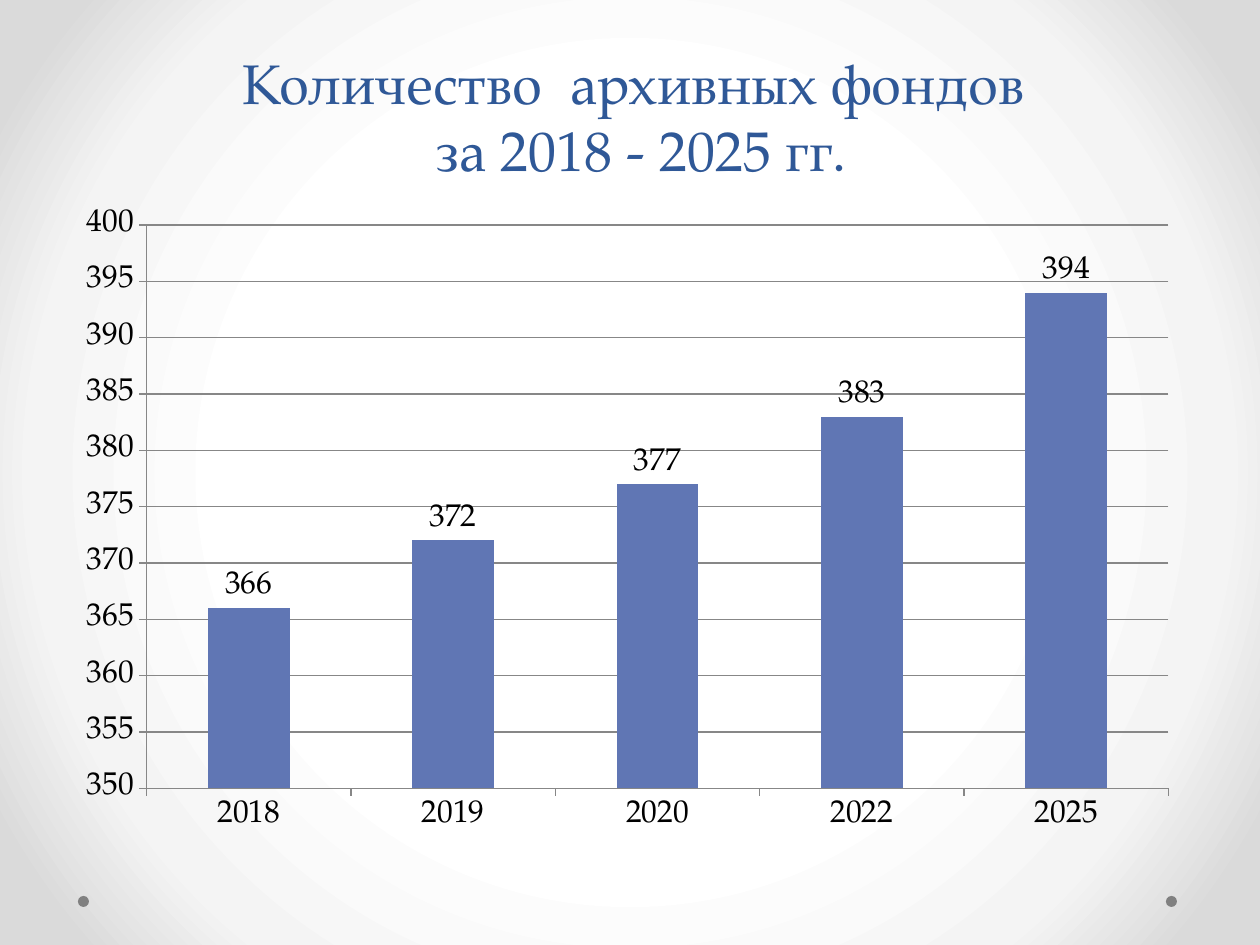
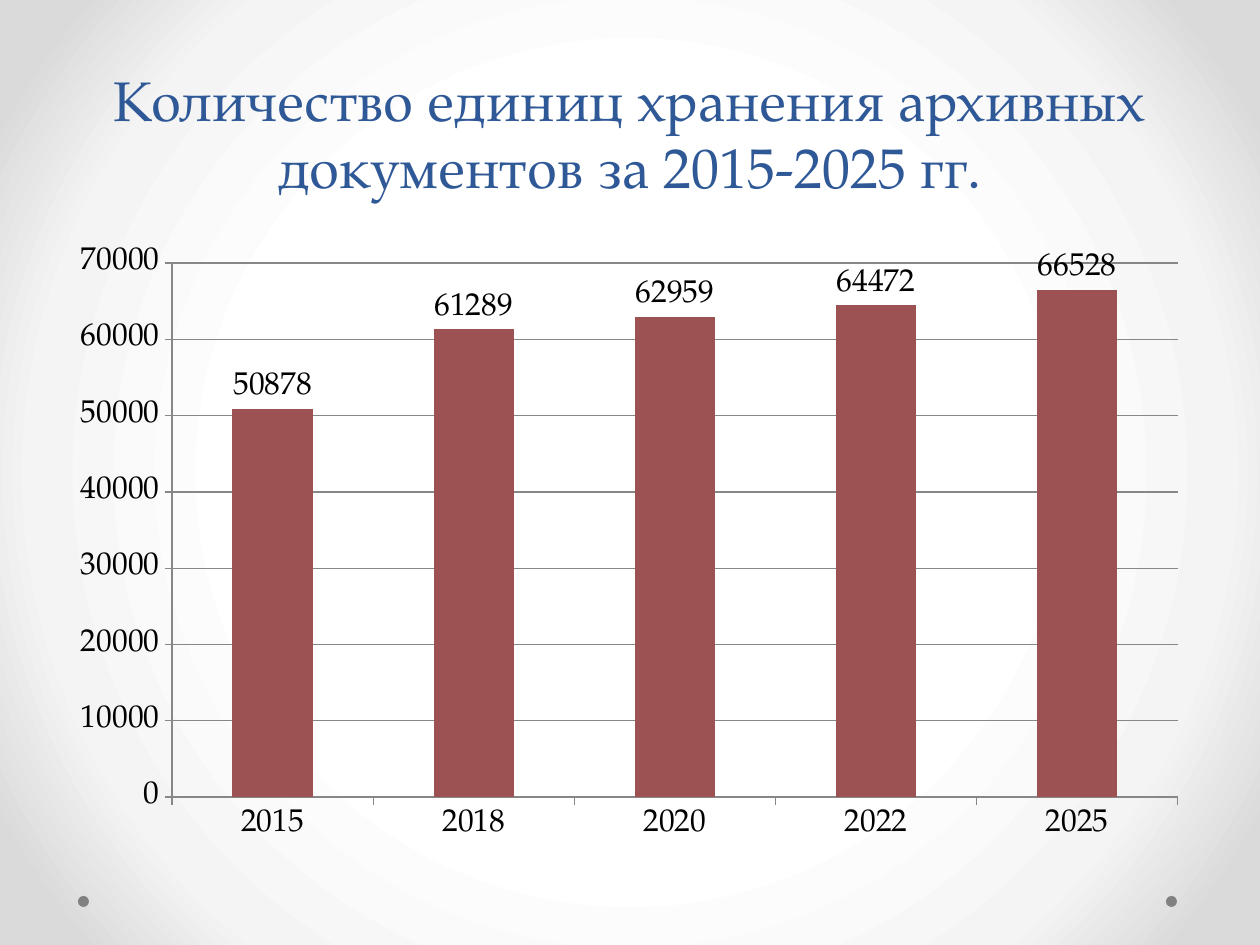
from lxml import etree
from pptx import Presentation
from pptx.chart.data import CategoryChartData
from pptx.dml.color import RGBColor
from pptx.enum.chart import XL_CHART_TYPE, XL_LABEL_POSITION, XL_TICK_MARK
from pptx.enum.shapes import MSO_SHAPE
from pptx.enum.text import MSO_ANCHOR, MSO_AUTO_SIZE, PP_ALIGN
from pptx.oxml import parse_xml
from pptx.oxml.ns import nsdecls, qn
from pptx.util import Pt

SCALE = 914400 / 126
FONT = "TeX Gyre Pagella"
COLORS = {"title": "2F5897", "text": "000000", "dot": "808080",
          "line": "878787", "blue": "6076B4", "red": "9C5252"}
GLOW = [(50, "FFFFFF"), (76, "F4F4F4"), (92, "DADADA")]
DOTS = [(1166, 896, 11, 11), (78, 896, 11, 11)]
COLUMN = XL_CHART_TYPE.COLUMN_CLUSTERED
ABOVE = XL_LABEL_POSITION.OUTSIDE_END
OUT, NONE = XL_TICK_MARK.OUTSIDE, XL_TICK_MARK.NONE
OVAL = MSO_SHAPE.OVAL
BOTTOM, CENTER = MSO_ANCHOR.BOTTOM, PP_ALIGN.CENTER
NO_FIT = MSO_AUTO_SIZE.NONE

PAGES = [
    {"title": ["Количество  архивных фондов ", "за 2018 - 2025 гг."],
     "head": (84, 71, 1113, 118), "box": (64, 195, 1133, 669),
     "plot": (147, 225, 1022, 563), "range": (350, 400, 5), "color": "blue",
     "data": {"2018": 366, "2019": 372, "2020": 377, "2022": 383, "2025": 394}},
    {"title": ["Количество единиц хранения архивных документов за 2015-2025 гг."],
     "head": (0, 37, 1260, 169), "box": (59, 234, 1143, 619),
     "plot": (172, 263, 1006, 534), "range": (0, 70000, 10000), "color": "red",
     "data": {"2015": 50878, "2018": 61289, "2020": 62959, "2022": 64472,
              "2025": 66528}},
]


def px(num):
    """Turn px into EMU."""
    return round(num * SCALE)


def rgb(name):
    """Look up a named colour."""
    return RGBColor.from_string(COLORS[name])


def style(font, size, color):
    """Set the shared typeface with a size and colour."""
    font.name, font.size, font.bold = FONT, Pt(size), False
    font.color.rgb = rgb(color)


def add_glow(master):
    """Fill the master background with a round gradient."""
    fill = master.background.fill
    fill.solid()
    stops = "".join(f'<a:gs pos="{pos * 1000}"><a:srgbClr val="{tone}"/></a:gs>'
                    for pos, tone in GLOW)
    grad = parse_xml(
        f'<a:gradFill {nsdecls("a")} rotWithShape="1"><a:gsLst>{stops}</a:gsLst>'
        '<a:path path="circle"><a:fillToRect l="50000" t="50000" r="50000" '
        'b="50000"/></a:path></a:gradFill>')
    solid = next(master.element.iter(qn("a:solidFill")))
    solid.getparent().replace(solid, grad)


def add_dots(slide, master):
    """Draw the two footer dots and move them to the master."""
    for box in DOTS:
        dot = slide.shapes.add_shape(OVAL, *map(px, box))
        dot.shadow.inherit = False
        dot.fill.solid()
        dot.fill.fore_color.rgb = rgb("dot")
        dot.line.fill.background()
        master.shapes.element.append(dot.element)


def add_title(slide, box, lines):
    """Place the title placeholder and write its lines."""
    head = slide.shapes.title
    head.left, head.top, head.width, head.height = map(px, box)
    frame = head.text_frame
    frame.word_wrap, frame.auto_size = True, NO_FIT
    frame.vertical_anchor = BOTTOM
    para = frame.paragraphs[0]
    para.alignment = CENTER
    for num, line in enumerate(lines):
        if num:
            para.add_line_break()
        run = para.add_run()
        run.text = line
        style(run.font, 32, "title")


def set_plot(chart, box, plot):
    """Fix the inner plot area as fractions of the chart box."""
    parts = ((plot[0] - box[0]) / box[2], (plot[1] - box[1]) / box[3],
             plot[2] / box[2], plot[3] / box[3])
    area = next(chart.element.iter(qn("c:plotArea")))
    for old in area.findall(qn("c:layout")):
        area.remove(old)
    layout = etree.Element(qn("c:layout"))
    manual = etree.SubElement(layout, qn("c:manualLayout"))
    rules = [("layoutTarget", "inner"), ("xMode", "edge"), ("yMode", "edge")]
    rules += [(key, f"{part:.3f}") for key, part in zip("xywh", parts)]
    for key, val in rules:
        etree.SubElement(manual, qn(f"c:{key}")).set("val", val)
    area.insert(0, layout)


def set_line(line):
    """Give an axis or grid its thin grey line."""
    line.color.rgb = rgb("line")
    line.width = Pt(0.75)


def add_bars(slide, page):
    """Add the labelled column chart in its box."""
    data = CategoryChartData()
    data.categories = list(page["data"])
    data.add_series("Series 1", list(page["data"].values()))
    box = page["box"]
    chart = slide.shapes.add_chart(COLUMN, *map(px, box), data).chart
    chart.has_legend = chart.has_title = False
    style(chart.font, 18, "text")
    set_plot(chart, box, page["plot"])
    scale = chart.value_axis
    scale.minimum_scale, scale.maximum_scale, scale.major_unit = page["range"]
    scale.has_major_gridlines = True
    set_line(scale.major_gridlines.format.line)
    for axis in (chart.category_axis, scale):
        axis.major_tick_mark, axis.minor_tick_mark = OUT, NONE
        set_line(axis.format.line)
    plot = chart.plots[0]
    plot.gap_width, plot.vary_by_categories = 150, False
    bars = plot.series[0]
    bars.format.fill.solid()
    bars.format.fill.fore_color.rgb = rgb(page["color"])
    labels = bars.data_labels
    labels.show_value, labels.position = True, ABOVE
    style(labels.font, 18, "text")


def main():
    """Build and save the deck."""
    deck = Presentation()
    deck.slide_width, deck.slide_height = px(1260), px(945)
    master = deck.slide_master
    add_glow(master)
    for num, page in enumerate(PAGES):
        slide = deck.slides.add_slide(deck.slide_layouts[5])
        if num == 0:
            add_dots(slide, master)
        add_title(slide, page["head"], page["title"])
        add_bars(slide, page)
    deck.save("out.pptx")


if __name__ == "__main__":
    main()
